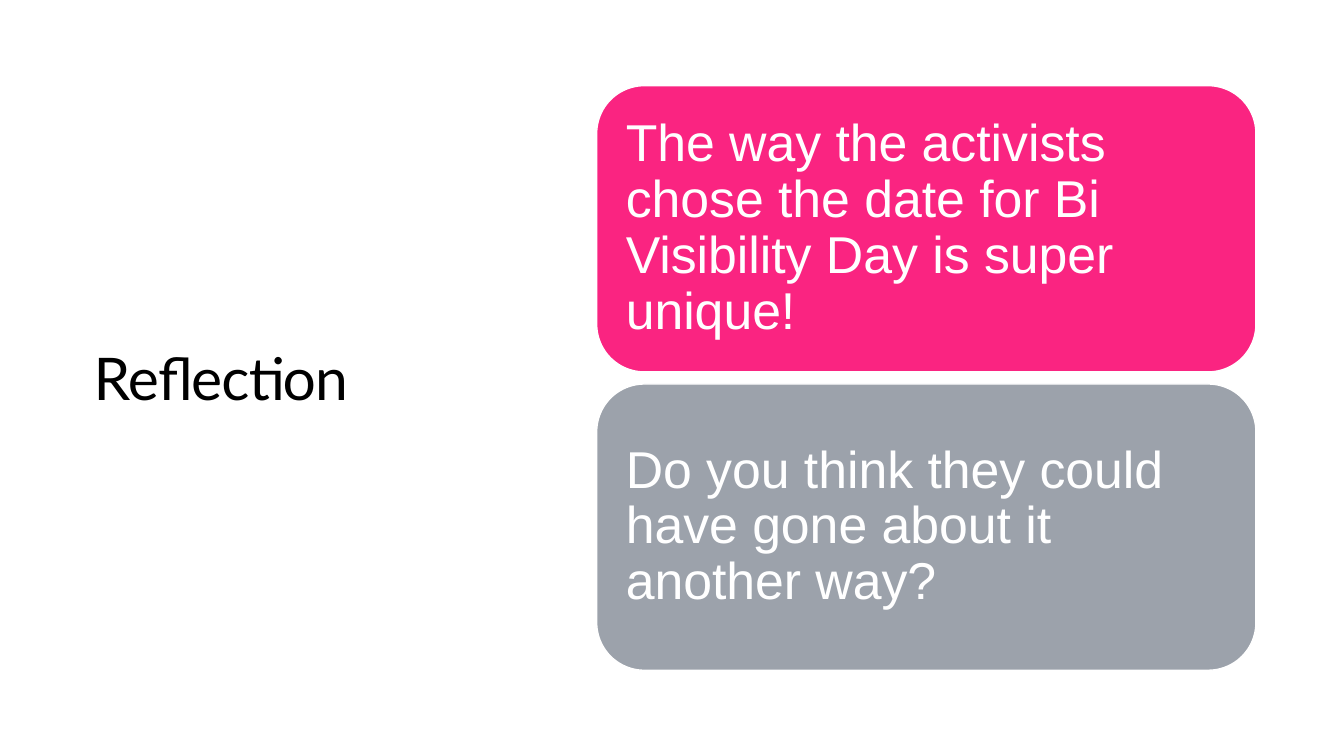
from dataclasses import dataclass

from pptx import Presentation
from pptx.dml.color import RGBColor
from pptx.enum.shapes import MSO_SHAPE as Shape
from pptx.enum.text import MSO_ANCHOR as Anchor, MSO_AUTO_SIZE as AutoSize, PP_ALIGN as Align
from pptx.slide import Slide
from pptx.text.text import TextFrame
from pptx.util import Pt

BLACK = RGBColor(0x00, 0x00, 0x00)
WHITE = RGBColor(0xFF, 0xFF, 0xFF)
PINK = RGBColor(0xFA, 0x24, 0x81)
GREY = RGBColor(0x9C, 0xA2, 0xAB)

CARD_LEFT, CARD_TOP = 426.24, 61.2
CARD_WIDTH, CARD_HEIGHT = 470.88, 204.5
CARD_STEP = 213.1
CARD_INSET = 10.8


@dataclass(frozen=True)
class Card:
    text: str
    fill: RGBColor


CARDS = [
    Card("The way the activists chose the date for Bi Visibility Day is super unique!", PINK),
    Card("Do you think they could have gone about it another way?", GREY),
]


def write(frame: TextFrame, text: str, line_spacing: float, font: dict, spacing: float = 0) -> None:
    """Fill a text frame with one left-aligned, vertically centred paragraph."""
    frame.word_wrap = True
    frame.auto_size = AutoSize.NONE
    frame.vertical_anchor = Anchor.MIDDLE
    para = frame.paragraphs[0]
    para.alignment = Align.LEFT
    para.line_spacing = line_spacing
    span = para.add_run()
    span.text = text
    span.font.color.rgb = font["color"]
    for name in ("name", "size"):
        setattr(span.font, name, font[name])
    if spacing:
        span._r.get_or_add_rPr().set("spc", str(round(spacing * 100)))


def add_title(page: Slide, text: str) -> None:
    title = page.shapes.title
    place = {"left": 59.76, "top": 61.2, "width": 307.44, "height": 420.48}
    for name, length in place.items():
        setattr(title, name, Pt(length))
    write(title.text_frame, text, 0.95, {"name": "Lato", "size": Pt(42), "color": BLACK}, -0.5)


def add_card(page: Slide, card: Card, row: int) -> None:
    box = page.shapes.add_shape(
        Shape.ROUNDED_RECTANGLE,
        Pt(CARD_LEFT), Pt(CARD_TOP + row * CARD_STEP), Pt(CARD_WIDTH), Pt(CARD_HEIGHT),
    )
    box.shadow.inherit = False
    box.fill.solid()
    box.fill.fore_color.rgb = card.fill
    box.line.color.rgb = WHITE
    box.line.width = Pt(1)
    for side in ("left", "top", "right", "bottom"):
        setattr(box.text_frame, f"margin_{side}", Pt(CARD_INSET))
    write(box.text_frame, card.text, 0.9, {"name": "Arial", "size": Pt(37), "color": WHITE})


def main() -> None:
    deck = Presentation()
    deck.slide_width, deck.slide_height = Pt(960), Pt(540)
    page = deck.slides.add_slide(deck.slide_layouts.get_by_name("Title Only"))

    # Heading on the left
    add_title(page, "Reflection")

    # Stacked cards on the right
    for row, card in enumerate(CARDS):
        add_card(page, card, row)

    deck.save("out.pptx")


if __name__ == "__main__":
    main()
